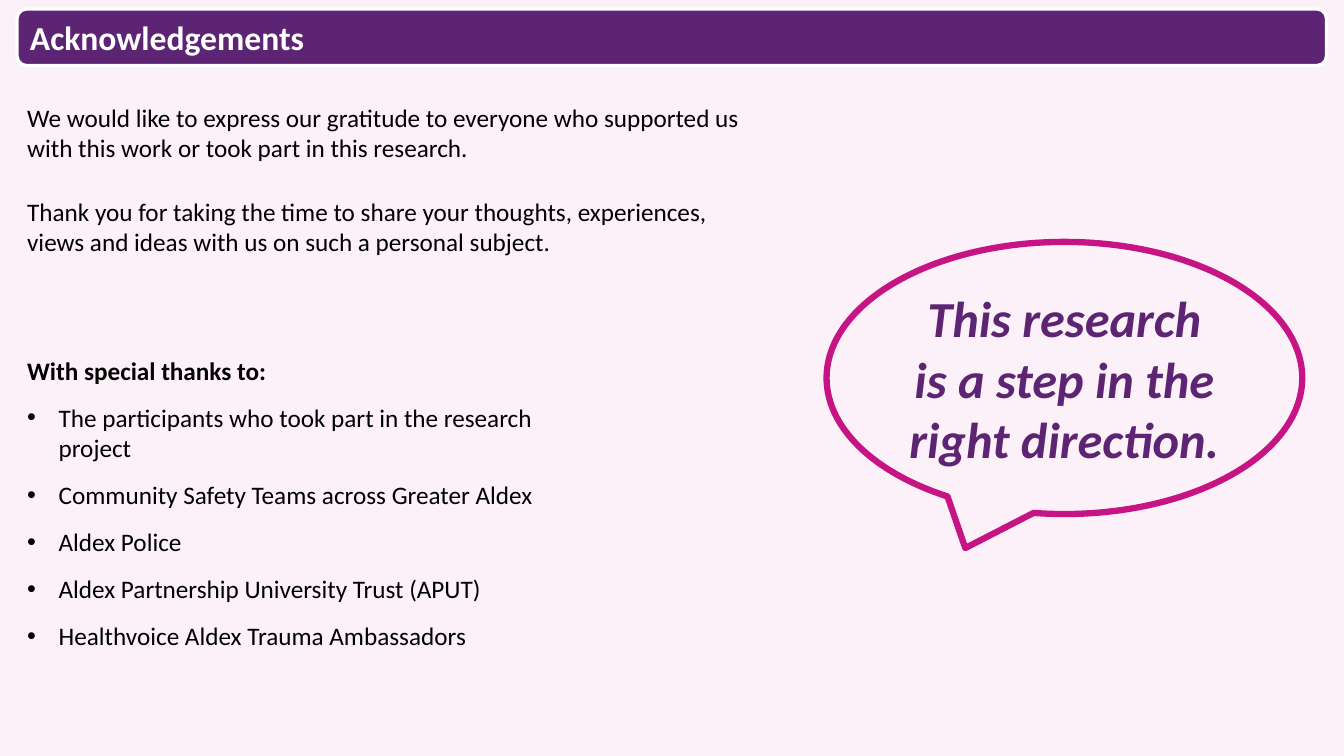
"""Build the acknowledgements slide with its thanks list and speech bubble."""
from dataclasses import dataclass

from lxml.etree import SubElement
from pptx import Presentation
from pptx.dml.color import RGBColor as RGB
from pptx.enum.shapes import MSO_SHAPE as SHAPE
from pptx.enum.text import MSO_ANCHOR as ANCHOR, MSO_AUTO_SIZE as AUTO, PP_ALIGN as ALIGN
from pptx.oxml.ns import qn
from pptx.util import Pt


@dataclass(frozen=True)
class Theme:
    """Colours, font and type sizes of the slide."""
    font: str = "Calibri"
    page: RGB = RGB(0xFC, 0xF1, 0xF8)
    purple: RGB = RGB(0x5C, 0x24, 0x72)
    pink: RGB = RGB(0xC7, 0x14, 0x85)
    white: RGB = RGB(0xFF, 0xFF, 0xFF)
    black: RGB = RGB(0, 0, 0)
    title: int = 24
    body: int = 18
    quote: int = 36


THEME = Theme()
INDENT = 22.5
GRATITUDE = [
    "We would like to express our gratitude to everyone who supported us with this work "
    "or took part in this research.",
    "Thank you for taking the time to share your thoughts, experiences, views and ideas "
    "with us on such a personal subject.",
]
THANKS_HEADING = "With special thanks to:"
THANKED = [
    "The participants who took part in the research project",
    "Community Safety Teams across Greater Aldex",
    "Aldex Police",
    "Aldex Partnership University Trust (APUT)",
    "Healthvoice Aldex Trauma Ambassadors",
]


def set_all(obj, values):
    """Set every attribute named in the dict."""
    for name, value in values.items():
        setattr(obj, name, value)


def place(sp, left, top, width, height):
    """Move and size a shape, in points."""
    set_all(sp, {"left": Pt(left), "top": Pt(top), "width": Pt(width), "height": Pt(height)})


def format_frame(tf, anchor):
    """Wrap text at a fixed size with the given anchor."""
    set_all(tf, {"word_wrap": True, "auto_size": AUTO.NONE, "vertical_anchor": anchor})


def write(p, text, size, color, align=ALIGN.LEFT, gap=0, bold=False, italic=False):
    """Fill a paragraph with one formatted run."""
    set_all(p, {"alignment": align, "space_before": Pt(gap), "space_after": Pt(gap)})
    r = p.add_run()
    r.text = text
    set_all(r.font, {"name": THEME.font, "size": Pt(size), "bold": bold, "italic": italic})
    r.font.color.rgb = color


def set_bullet(p, shown):
    """Show a hanging bullet or remove the inherited one."""
    pPr = p._p.get_or_add_pPr()
    indent = Pt(INDENT) if shown else 0
    pPr.set("marL", str(indent))
    pPr.set("indent", str(-indent))
    if shown:
        SubElement(pPr, qn("a:buFont"), typeface="Arial")
        SubElement(pPr, qn("a:buChar"), char="•")
    else:
        SubElement(pPr, qn("a:buNone"))


def fill_body(sp, box, lines, gap):
    """Place a body and write its (text, bold, bulleted) lines."""
    place(sp, *box)
    tf = sp.text_frame
    format_frame(tf, ANCHOR.TOP)
    for i, (text, bold, bulleted) in enumerate(lines):
        p = tf.add_paragraph() if i else tf.paragraphs[0]
        write(p, text, THEME.body, THEME.black, gap=gap, bold=bold)
        set_bullet(p, bulleted)


def add_outlined(s, kind, box, fill, line, weight):
    """Add a preset shape without shadow, filled or hollow."""
    sp = s.shapes.add_shape(kind, *map(Pt, box))
    sp.shadow.inherit = False
    if fill is None:
        sp.fill.background()
    else:
        sp.fill.solid()
        sp.fill.fore_color.rgb = fill
    sp.line.color.rgb = line
    sp.line.width = Pt(weight)
    return sp


def add_title_bar(s, text):
    """Put the title on a rounded bar at the top."""
    bar = add_outlined(s, SHAPE.ROUNDED_RECTANGLE, (12.2, 6.5, 935.3, 40.3),
                       THEME.purple, THEME.white, 2.25)
    s.shapes._spTree.insert(2, bar._element)
    title = s.shapes.title
    place(title, 14.2, 6.5, 931.3, 40.3)
    format_frame(title.text_frame, ANCHOR.MIDDLE)
    write(title.text_frame.paragraphs[0], text, THEME.title, THEME.white, bold=True)


def add_quote(s, text):
    """Add the speech bubble with its quotation."""
    bubble = add_outlined(s, SHAPE.OVAL_CALLOUT, (590.4, 172.8, 339.8, 194.4),
                          None, THEME.pink, 4.5)
    format_frame(bubble.text_frame, ANCHOR.MIDDLE)
    write(bubble.text_frame.paragraphs[0], text, THEME.quote, THEME.purple,
          align=ALIGN.CENTER, bold=True, italic=True)


def main():
    """Build and save the slide."""
    prs = Presentation()
    set_all(prs, {"slide_width": Pt(960), "slide_height": Pt(540)})
    s = prs.slides.add_slide(prs.slide_layouts[3])
    s.background.fill.solid()
    s.background.fill.fore_color.rgb = THEME.page

    add_title_bar(s, "Acknowledgements")
    intro, thanks = s.placeholders[1], s.placeholders[2]
    fill_body(intro, (12.2, 69.4, 534.2, 118.8),
              [(text, False, False) for text in GRATITUDE], gap=12)
    fill_body(thanks, (12.2, 250, 396, 220.3),
              [(THANKS_HEADING, True, False)] + [(name, False, True) for name in THANKED],
              gap=6)
    add_quote(s, "This research is a step in the right direction.")
    prs.save("out.pptx")


if __name__ == "__main__":
    main()
